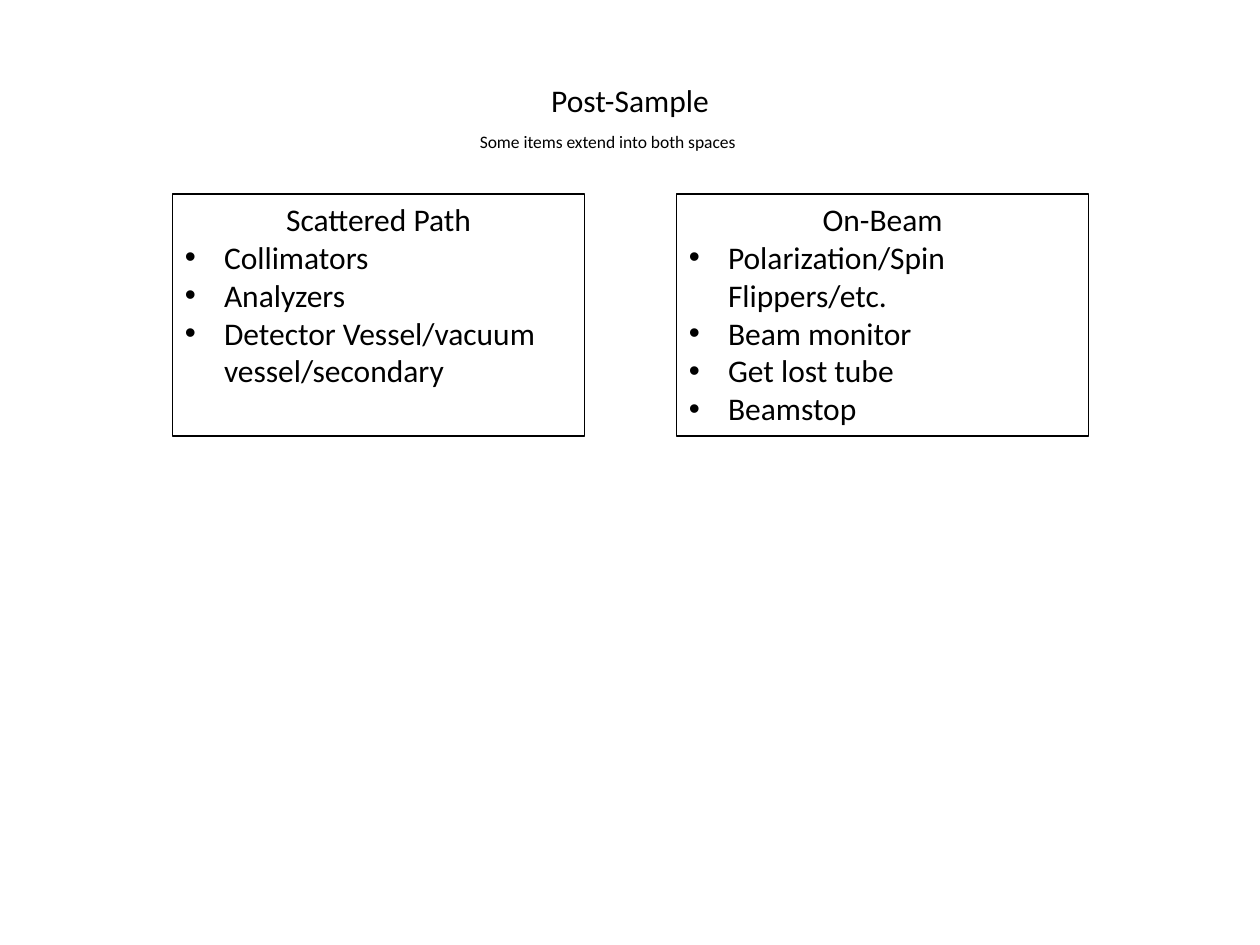
from lxml.etree import SubElement
from pptx import Presentation
from pptx.dml.color import RGBColor
from pptx.enum.shapes import MSO_SHAPE
from pptx.enum.text import MSO_ANCHOR, MSO_AUTO_SIZE, PP_ALIGN
from pptx.oxml.ns import qn
from pptx.util import Inches, Pt

BLACK = "000000"
LISTS = [
    ("Scattered Path",
     ["Collimators", "Analyzers", "Detector Vessel/vacuum vessel/secondary"]),
    ("On-Beam",
     ["Polarization/Spin Flippers/etc.", "Beam monitor", "Get lost tube",
      "Beamstop"]),
]


def color(hex_text):
    return RGBColor.from_string(hex_text)


def place(shape, left, top, width, height):
    shape.left, shape.top = Inches(left), Inches(top)
    shape.width, shape.height = Inches(width), Inches(height)


def set_frame(frame, wrap=True, auto_size=MSO_AUTO_SIZE.SHAPE_TO_FIT_TEXT):
    frame.word_wrap = wrap
    frame.auto_size = auto_size
    frame.vertical_anchor = MSO_ANCHOR.TOP


def write(para, text, size=18, align=PP_ALIGN.LEFT):
    para.text = text
    para.alignment = align
    para.font.name = "Calibri"
    para.font.size = Pt(size)
    para.font.color.rgb = color(BLACK)


def add_bullet(para, indent=0.31):
    props = para._p.get_or_add_pPr()
    props.set("marL", str(Inches(indent)))
    props.set("indent", str(-Inches(indent)))
    font = SubElement(props, qn("a:buFont"), typeface="Arial")
    char = SubElement(props, qn("a:buChar"), char="•")
    # Bullet settings come before the paragraph's font settings
    props.find(qn("a:defRPr")).addprevious(font)
    font.addnext(char)


def add_heading(page, left, top, width, height):
    title = page.shapes.title
    place(title, left, top, width, height)
    set_frame(title.text_frame, wrap=False)
    write(title.text_frame.paragraphs[0], "Post-Sample", align=PP_ALIGN.CENTER)


def add_note(page, left, top, width, height):
    note = page.shapes.add_textbox(0, 0, 0, 0)
    place(note, left, top, width, height)
    set_frame(note.text_frame)
    write(note.text_frame.paragraphs[0], "Some items extend into both spaces",
          size=10)


def add_list_box(page, heading, items, left, top, width, height):
    box = page.shapes.add_shape(MSO_SHAPE.RECTANGLE, 0, 0, 0, 0)
    place(box, left, top, width, height)
    box.shadow.inherit = False
    box.fill.background()
    box.line.color.rgb = color(BLACK)
    box.line.width = Pt(0.75)
    frame = box.text_frame
    # Fixed height keeps both boxes equally tall
    set_frame(frame, auto_size=MSO_AUTO_SIZE.NONE)
    write(frame.paragraphs[0], heading, align=PP_ALIGN.CENTER)
    for item in items:
        para = frame.add_paragraph()
        write(para, item)
        add_bullet(para)


def main():
    deck = Presentation()
    deck.slide_width, deck.slide_height = Inches(10), Inches(7.5)
    page = deck.slides.add_slide(deck.slide_layouts.get_by_name("Title Only"))

    add_heading(page, 4.26, 0.59, 1.48, 0.4)
    for column, (heading, items) in enumerate(LISTS):
        add_list_box(page, heading, items, 1.37 + 4 * column, 1.54, 3.27, 1.92)
    add_note(page, 3.71, 0.99, 2.47, 0.27)

    deck.save("out.pptx")


if __name__ == "__main__":
    main()
